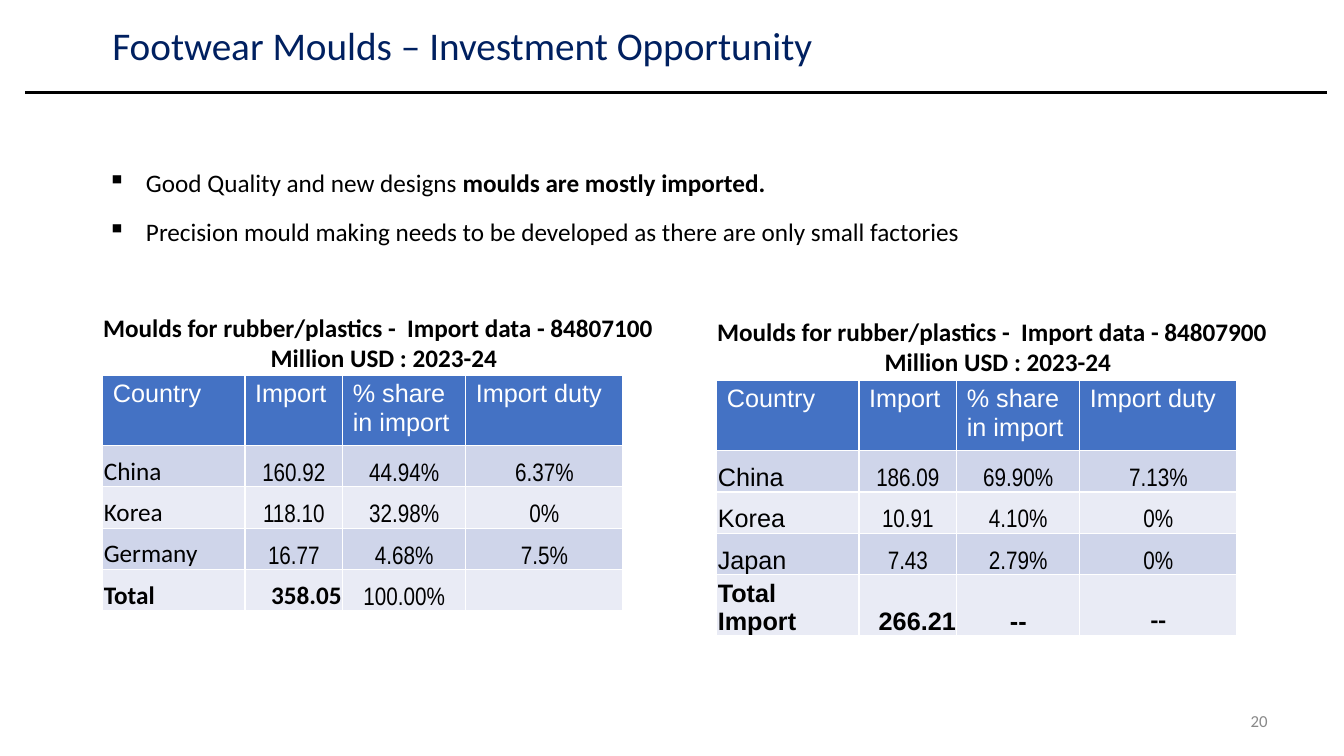
"""Build the footwear moulds investment opportunity slide."""
from lxml import etree
from pptx import Presentation
from pptx.dml.color import RGBColor
from pptx.enum.shapes import MSO_CONNECTOR
from pptx.enum.text import MSO_ANCHOR as ANCHOR, PP_ALIGN as ALIGN
from pptx.oxml.ns import qn
from pptx.util import Inches, Pt

BLACK = RGBColor(0, 0, 0)
WHITE = RGBColor(255, 255, 255)
NAVY = RGBColor(0x00, 0x20, 0x60)
GREY = RGBColor(0x89, 0x89, 0x89)
HEADER_BLUE = RGBColor(0x44, 0x72, 0xC4)
BANDS = (RGBColor(0xCF, 0xD5, 0xEA), RGBColor(0xE9, 0xEB, 0xF5))

TITLE = "Footwear Moulds – Investment Opportunity"
PAGE_NUMBER = "20"
POINTS = [
    [("Good Quality and new designs ", False), ("moulds are mostly imported. ", True)],
    [("Precision mould making needs to be developed as there are only small factories ", False)],
]
HEADER = ["Country", "Import", "% share\nin import", "Import duty"]
PERIOD = " Million USD : 2023-24"
IMPORTS = [
    {
        "caption": "Moulds for rubber/plastics -  Import data - 84807100 ",
        "caption_box": (0.25, 3.05, 7.06, 0.71),
        "table_at": (1.02, 3.72),
        "country_font": "Calibri",
        "rows": [
            ("China", "160.92", "44.94%", "6.37%"),
            ("Korea", "118.10", "32.98%", "0%"),
            ("Germany", "16.77", "4.68%", "7.5%"),
        ],
        "total": ("Total", "358.05", "100.00%", ""),
        "total_styles": [("Calibri", True), ("Calibri", True),
                         ("Arial Narrow", False), ("Arial Narrow", False)],
    },
    {
        "caption": "Moulds for rubber/plastics -  Import data - 84807900 ",
        "caption_box": (6.65, 3.09, 6.44, 0.71),
        "table_at": (7.11, 3.77),
        "country_font": "Arial",
        "rows": [
            ("China", "186.09", "69.90%", "7.13%"),
            ("Korea", "10.91", "4.10%", "0%"),
            ("Japan", "7.43", "2.79%", "0%"),
        ],
        "total": ("Total Import", "266.21", "--", "--"),
        "total_styles": [("Arial", True), ("Arial", True),
                         ("Arial", True), ("Calibri", True)],
    },
]
COLUMN_WIDTHS = [1.41, 0.97, 1.22, 1.56]
ROW_HEIGHTS = [0.7] + [0.41] * 4
HEADER_MARGINS = (0.1, 0.05, 0.1, 0.05)
BODY_MARGINS = (0.01, 0.01, 0.01, 0)
BODY_ALIGNS = [ALIGN.LEFT, ALIGN.CENTER, ALIGN.CENTER, ALIGN.CENTER]
TOTAL_ALIGNS = [ALIGN.LEFT, ALIGN.RIGHT, ALIGN.CENTER, ALIGN.CENTER]


def add_run(paragraph, text, size=18, font="Calibri", color=BLACK, bold=False):
    run = paragraph.add_run()
    run.text = text
    run.font.size = Pt(size)
    run.font.name = font
    run.font.bold = bold
    run.font.color.rgb = color


def add_paragraphs(frame, lines, align, **style):
    for index, line in enumerate(lines):
        paragraph = frame.add_paragraph() if index else frame.paragraphs[0]
        paragraph.alignment = align
        add_run(paragraph, line, **style)


def add_frame(slide, box, anchor=ANCHOR.MIDDLE):
    frame = slide.shapes.add_textbox(*map(Inches, box)).text_frame
    frame.word_wrap = True
    frame.vertical_anchor = anchor
    return frame


def add_points(slide):
    frame = add_frame(slide, (0.97, 0.93, 11.13, 2.07))
    for index, point in enumerate(POINTS):
        paragraph = frame.add_paragraph() if index else frame.paragraphs[0]
        paragraph.alignment = ALIGN.JUSTIFY
        paragraph.line_spacing = 1.6
        properties = paragraph._p.get_or_add_pPr()
        properties.set("marL", str(Inches(0.38)))
        properties.set("indent", str(-Inches(0.38)))
        etree.SubElement(properties, qn("a:buChar")).set("char", "▪")
        for text, bold in point:
            add_run(paragraph, text, bold=bold)


def fill_cell(cell, text, fill, margins, anchor, align, **style):
    cell.fill.solid()
    cell.fill.fore_color.rgb = fill
    cell.margin_left, cell.margin_top, cell.margin_right, cell.margin_bottom = map(Inches, margins)
    cell.vertical_anchor = anchor
    if text:
        add_paragraphs(cell.text_frame, text.split("\n"), align, **style)


def add_import_table(slide, data):
    size = (sum(COLUMN_WIDTHS), sum(ROW_HEIGHTS))
    table = slide.shapes.add_table(
        len(ROW_HEIGHTS), len(COLUMN_WIDTHS), *map(Inches, data["table_at"] + size)).table
    for column, width in zip(table.columns, COLUMN_WIDTHS):
        column.width = Inches(width)
    for row, height in zip(table.rows, ROW_HEIGHTS):
        row.height = Inches(height)
    for column, label in enumerate(HEADER):
        fill_cell(table.cell(0, column), label, HEADER_BLUE, HEADER_MARGINS,
                  ANCHOR.TOP, ALIGN.LEFT, font="Arial", color=WHITE)
    country_styles = [(data["country_font"], False)] + [("Arial Narrow", False)] * 3
    body = [(values, country_styles, BODY_ALIGNS) for values in data["rows"]]
    body.append((data["total"], data["total_styles"], TOTAL_ALIGNS))
    for row, (values, styles, aligns) in enumerate(body, 1):
        for column, (value, (font, bold), align) in enumerate(zip(values, styles, aligns)):
            fill_cell(table.cell(row, column), value, BANDS[(row - 1) % 2], BODY_MARGINS,
                      ANCHOR.BOTTOM, align, font=font, bold=bold)


def add_title_rule(slide):
    rule = slide.shapes.add_connector(
        MSO_CONNECTOR.STRAIGHT, *map(Inches, (0.25, 0.92, 13.16, 0.92)))
    rule.line.color.rgb = BLACK
    rule.line.width = Pt(2.25)
    etree.SubElement(rule._element.spPr, qn("a:effectLst"))


def main():
    deck = Presentation()
    deck.slide_width, deck.slide_height = Inches(13.33), Inches(7.5)
    slide = deck.slides.add_slide(deck.slide_layouts[6])
    add_points(slide)
    add_title_rule(slide)
    title = add_frame(slide, (-0.87, 0.07, 10.91, 0.8))
    add_paragraphs(title, [TITLE], ALIGN.CENTER, size=28, color=NAVY)
    title.paragraphs[0].line_spacing = 0.9
    page = add_frame(slide, (9.56, 6.95, 3.11, 0.4))
    add_paragraphs(page, [PAGE_NUMBER], ALIGN.RIGHT, size=12, color=GREY)
    for data in IMPORTS:
        add_import_table(slide, data)
        caption = add_frame(slide, data["caption_box"], ANCHOR.TOP)
        add_paragraphs(caption, [data["caption"], PERIOD], ALIGN.CENTER, bold=True)
    deck.save("out.pptx")


if __name__ == "__main__":
    main()
